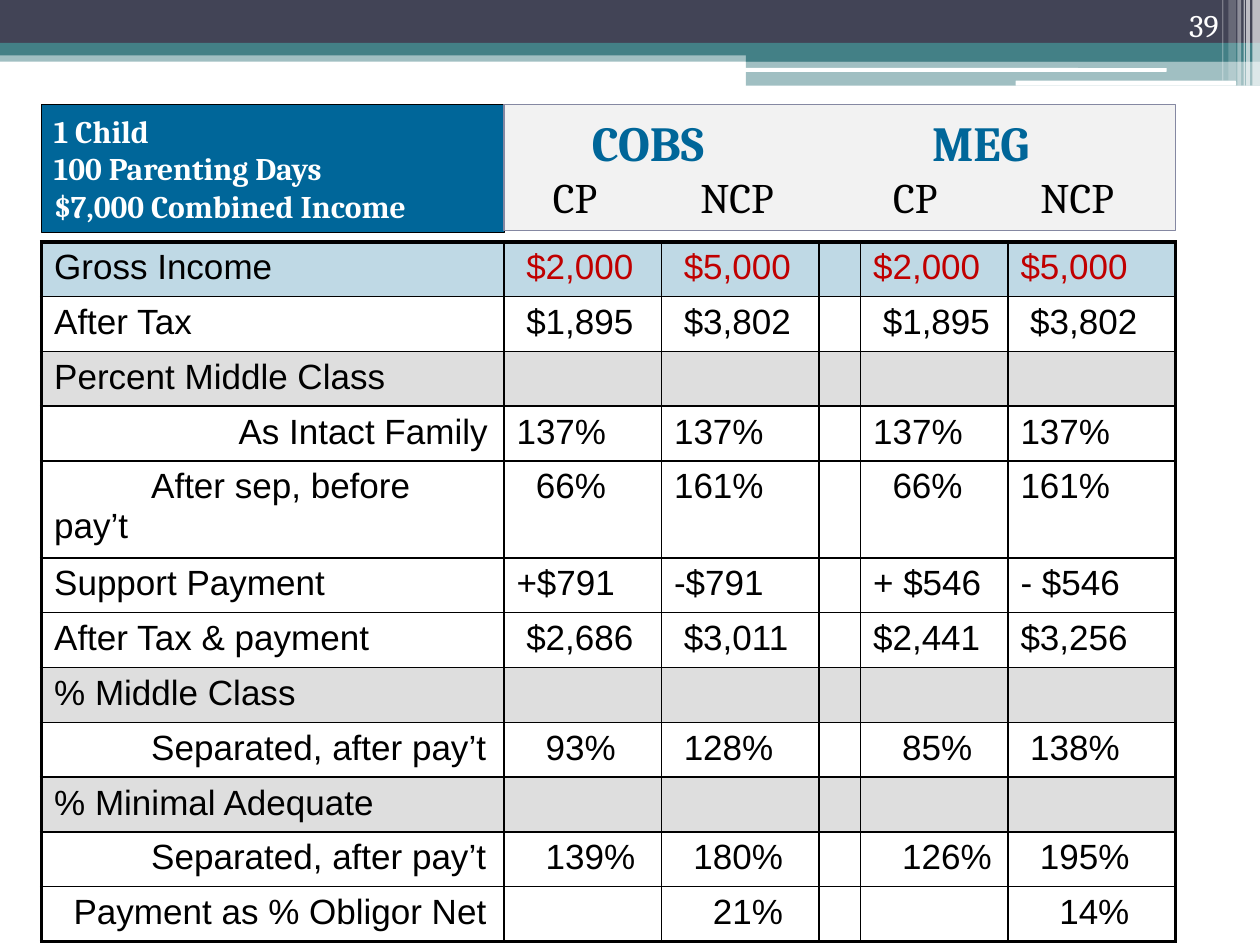
from pptx import Presentation
from pptx.dml.color import RGBColor
from pptx.enum.shapes import MSO_SHAPE
from pptx.enum.text import MSO_ANCHOR, PP_ALIGN
from pptx.oxml.ns import qn
from pptx.util import Inches, Pt
from lxml import etree

RECT, ROUND = MSO_SHAPE.RECTANGLE, MSO_SHAPE.ROUNDED_RECTANGLE
LEFT, RIGHT = PP_ALIGN.LEFT, PP_ALIGN.RIGHT
BOTTOM = MSO_ANCHOR.BOTTOM
NAVY, TEAL, BLUE, WHITE, BLACK = "424456", "438086", "006699", "FFFFFF", "000000"
PALE_BLUE, GREY, RED = "BFD9E5", "DEDEDE", "C00000"

INDENT_STEP = 0.077
COLUMN_WIDTHS = [3.67, 1.25, 1.25, 0.33, 1.17, 1.33]
VALUE_COLUMNS = [1, 2, 4, 5]
ROW_HEIGHT, WRAPPED_ROW_HEIGHT = 0.435, 0.77
WRAPPED_ROW = 4

# Label, its indent steps, fill, then (value, indent steps) for each value column
TABLE_ROWS = [
    ("Gross Income", 0, PALE_BLUE, [("$2,000", 1), ("$5,000", 1), ("$2,000", 0), ("$5,000", 0)]),
    ("After Tax", 0, None, [("$1,895", 1), ("$3,802", 1), ("$1,895", 1), ("$3,802", 1)]),
    ("Percent Middle Class", 0, GREY, []),
    ("As Intact Family", 19, None, [("137%", 0)] * 4),
    ("After sep, before pay’t", 10, None, [("66%", 2), ("161%", 0), ("66%", 2), ("161%", 0)]),
    ("Support Payment", 0, None, [("+$791", 0), ("-$791", 0), ("+ $546", 0), ("- $546", 0)]),
    ("After Tax & payment", 0, None, [("$2,686", 1), ("$3,011", 1), ("$2,441", 0), ("$3,256", 0)]),
    ("% Middle Class", 0, GREY, []),
    ("Separated, after pay’t", 10, None, [("93%", 3), ("128%", 1), ("85%", 3), ("138%", 1)]),
    ("% Minimal Adequate", 0, GREY, []),
    ("Separated, after pay’t", 10, None, [("139%", 3), ("180%", 2), ("126%", 3), ("195%", 2)]),
    ("Payment as % Obligor Net", 2, None, [("", 0), ("21%", 4), ("", 0), ("14%", 4)]),
]


def color(hex_string):
    return RGBColor.from_string(hex_string)


def add_block(page, box, fill, opacity=100, kind=RECT, line=None, line_width=0.25):
    shape = page.shapes.add_shape(kind, *[Inches(value) for value in box])
    shape.shadow.inherit = False
    shape.fill.solid()
    shape.fill.fore_color.rgb = color(fill)
    if opacity < 100:
        tint = shape.fill._xPr.find(".//" + qn("a:srgbClr"))
        etree.SubElement(tint, qn("a:alpha"), val=str(opacity * 1000))
    if line:
        shape.line.color.rgb = color(line)
        shape.line.width = Pt(line_width)
    else:
        shape.line.fill.background()
    return shape


def write(para, text, size, hex_string, font="Cambria", bold=False, align=LEFT):
    para.text = text
    para.alignment = align
    for span in para.runs:
        span.font.name = font
        span.font.size = Pt(size)
        span.font.bold = bold
        span.font.color.rgb = color(hex_string)


def add_banner(page, left, top, width, height):
    """Draw the coloured bands, with bars and stripes towards the right edge."""
    right = left + width
    add_block(page, (left, top + 0.4, width, 0.09), TEAL, 50)
    add_block(page, (left, top, width, 0.34), NAVY)
    add_block(page, (left, top + 0.34, width, 0.1), TEAL)
    add_block(page, (right - 4.08, top + 0.39, 4.08, 0.1), TEAL)
    add_block(page, (right - 4.08, top + 0.48, 4.08, 0.2), TEAL, 50)
    add_block(page, (right - 4.09, top + 0.54, 3.35, 0.03), WHITE, kind=ROUND)
    add_block(page, (right - 1.94, top + 0.64, 1.75, 0.04), WHITE, kind=ROUND)
    stripes = [(0.06, 0.06, 0, 65), (0.11, 0.03, 0, 65), (0.13, 0.01, 0, 60),
               (0.18, 0.03, 0, 40), (0.25, 0.06, 0.04, 20), (0.3, 0.01, 0.04, 30)]
    for offset, stripe_width, gap, opacity in stripes:
        add_block(page, (right - offset, top, stripe_width, height - gap), WHITE, opacity)


def add_case_box(page, *box):
    frame = add_block(page, box, BLUE, line=BLACK).text_frame
    frame.text = "1 Child\n100 Parenting Days\n$7,000 Combined Income"
    for para in frame.paragraphs:
        write(para, para.text, 18, WHITE, bold=True)


def set_tabs(para, stops):
    tabs = etree.SubElement(para._p.get_or_add_pPr(), qn("a:tabLst"))
    for stop in stops:
        etree.SubElement(tabs, qn("a:tab"), pos=str(Inches(stop)), algn="l")


def add_group_header(page, *box):
    frame = add_block(page, box, "F2F2F2", line="8588A2", line_width=0.75).text_frame
    groups, parents = frame.paragraphs[0], frame.add_paragraph()
    write(groups, "\tCOBS\tMEG", 28, BLUE, bold=True)
    set_tabs(groups, [0.6, 3.3])
    write(parents, "\tCP\tNCP\tCP\tNCP", 24, BLACK)
    set_tabs(parents, [0.29, 1.46, 2.99, 4.16])


def style_cell(cell, fill, edges):
    """Set borders and fill; edges maps each side to a line width in points."""
    properties = cell._tc.get_or_add_tcPr()
    for side in "LRTB":
        line = etree.SubElement(properties, qn("a:ln" + side), w=str(Pt(edges[side])))
        paint = etree.SubElement(line, qn("a:solidFill"))
        etree.SubElement(paint, qn("a:srgbClr"), val=BLACK)
    if fill:
        cell.fill.solid()
        cell.fill.fore_color.rgb = color(fill)
    else:
        cell.fill.background()


def write_cell(cell, text, steps, hex_string):
    para = cell.text_frame.paragraphs[0]
    write(para, text, 20, hex_string, font="Arial")
    properties = para._p.get_or_add_pPr()
    properties.set("marL", "0")
    properties.set("indent", str(Inches(steps * INDENT_STEP)))
    spacing = etree.SubElement(properties, qn("a:spcBef"))
    etree.SubElement(spacing, qn("a:spcPct"), val="20000")


def add_income_table(page, left, top, width, height):
    row_count, column_count = len(TABLE_ROWS), len(COLUMN_WIDTHS)
    table = page.shapes.add_table(row_count, column_count, Inches(left), Inches(top),
                                  Inches(width), Inches(height)).table
    table.first_row = table.horz_banding = False
    for column, column_width in zip(table.columns, COLUMN_WIDTHS):
        column.width = Inches(column_width)
    for r, (label, steps, fill, values) in enumerate(TABLE_ROWS):
        table.rows[r].height = Inches(WRAPPED_ROW_HEIGHT if r == WRAPPED_ROW else ROW_HEIGHT)
        for c in range(column_count):
            outer = {"L": c == 0, "R": c == column_count - 1,
                     "T": r == 0, "B": r == row_count - 1}
            edges = {side: 2.25 if is_outer else 1 for side, is_outer in outer.items()}
            style_cell(table.cell(r, c), fill, edges)
        write_cell(table.cell(r, 0), label, steps, BLACK)
        for c, (value, value_steps) in zip(VALUE_COLUMNS, values):
            if value:
                write_cell(table.cell(r, c), value, value_steps, RED if r == 0 else BLACK)


def add_page_number(page, *box):
    frame = page.shapes.add_textbox(*[Inches(value) for value in box]).text_frame
    frame.word_wrap = True
    frame.vertical_anchor = BOTTOM
    write(frame.paragraphs[0], "39", 18, WHITE, align=RIGHT)


def main():
    deck = Presentation()
    deck.slide_width, deck.slide_height = Inches(10), Inches(7.5)
    page = deck.slides.add_slide(deck.slide_layouts[6])
    add_banner(page, 0, 0, 10, 0.68)
    add_income_table(page, 0.33, 1.92, 9, 5.56)
    add_case_box(page, 0.33, 0.83, 3.67, 1.01)
    add_group_header(page, 4, 0.83, 5.33, 1)
    add_page_number(page, 8.94, 0, 0.83, 0.4)
    deck.save("out.pptx")


if __name__ == "__main__":
    main()
